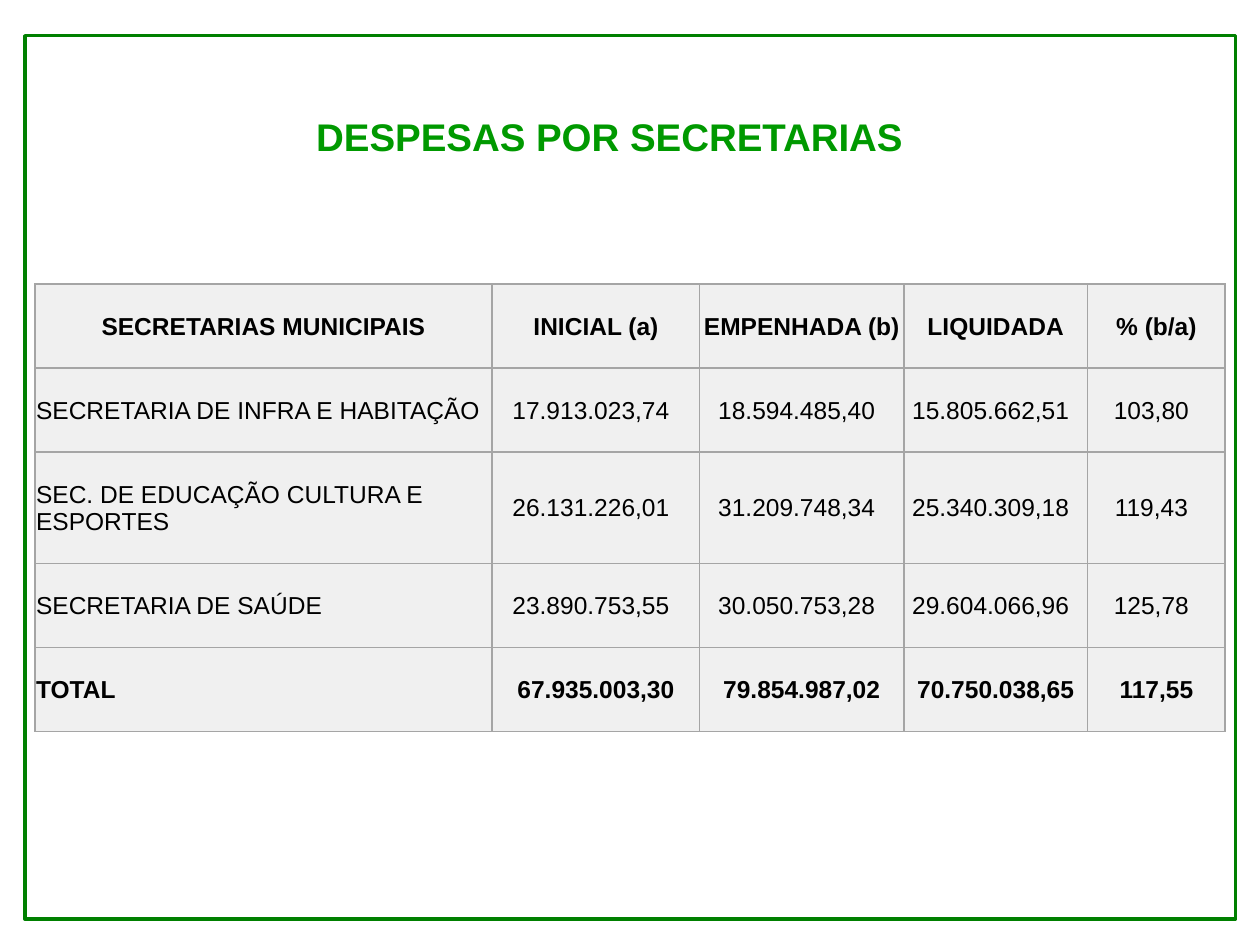
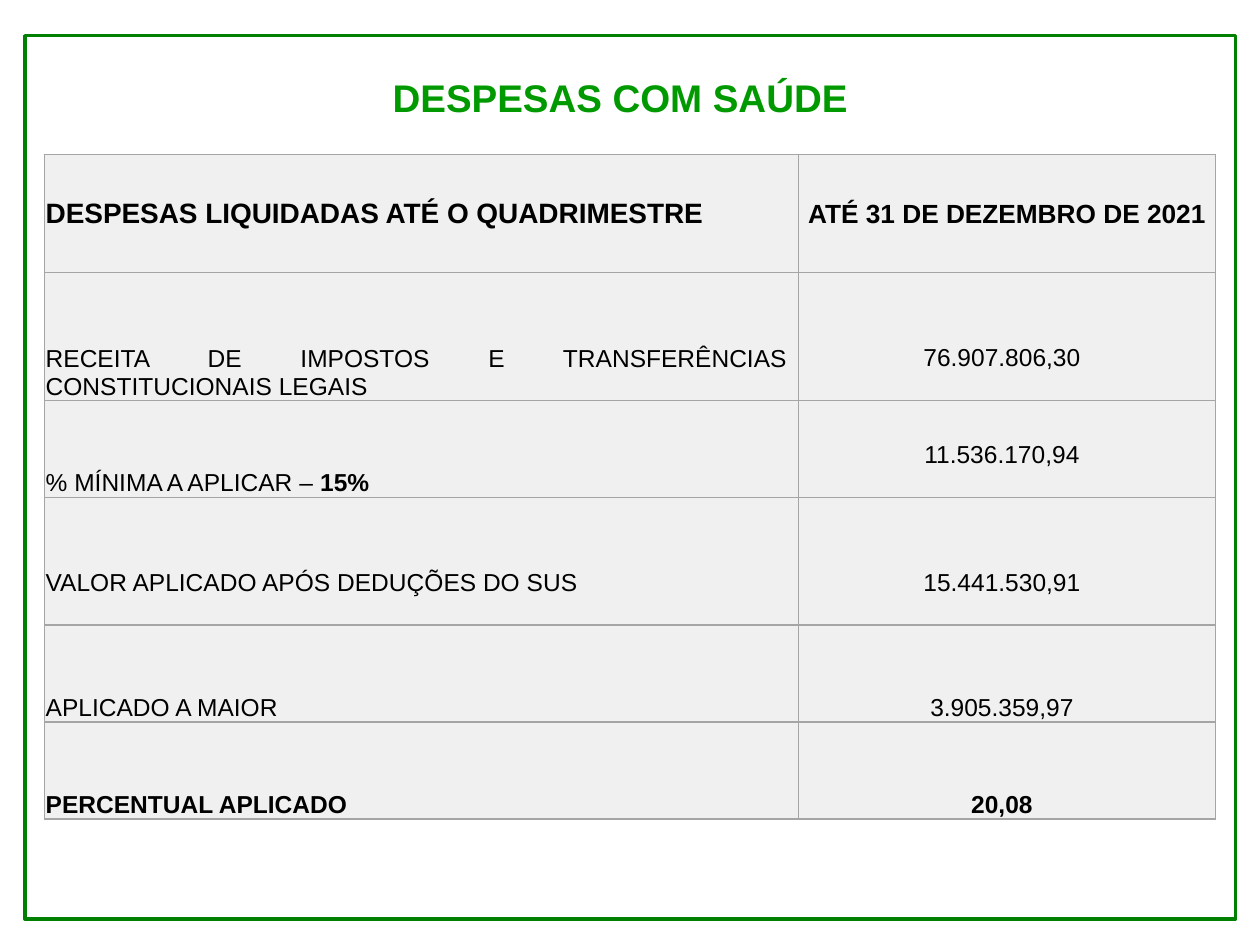
"""Builds two slides of municipal spending tables in a shared green frame."""
from lxml import etree
from pptx import Presentation
from pptx import util as u
from pptx.dml import color
from pptx.enum import shapes, text
from pptx.oxml import ns

COLORS = {"frame": "008000", "title": "009900", "text": "000000",
          "cell": "F0F0F0", "border": "A5A5A5"}
FONT = "Arial"
LEFT, CENTER, JUSTIFY = text.PP_ALIGN.LEFT, text.PP_ALIGN.CENTER, text.PP_ALIGN.JUSTIFY
MIDDLE, BOTTOM = text.MSO_ANCHOR.MIDDLE, text.MSO_ANCHOR.BOTTOM
INSET, WIDE_INSET, LINE = 0.72, 6.48, 16.1

SECRETARIAS = {
    "title": "DESPESAS POR SECRETARIAS", "title_top": 37.4, "title_inset": 25.5,
    "left": 19.9, "top": 162.3,
    "columns": [261.4, 118.6, 116.6, 105.1, 78.6],
    "heights": [48, 48, 63.7, 48, 48],
    "rows": [
        ("SECRETARIAS MUNICIPAIS", "INICIAL (a)", "EMPENHADA (b)", "LIQUIDADA", "% (b/a)"),
        ("SECRETARIA DE INFRA E HABITAÇÃO", "17.913.023,74", "18.594.485,40", "15.805.662,51", "103,80"),
        ("SEC. DE EDUCAÇÃO CULTURA E ESPORTES", "26.131.226,01", "31.209.748,34", "25.340.309,18", "119,43"),
        ("SECRETARIA DE SAÚDE", "23.890.753,55", "30.050.753,28", "29.604.066,96", "125,78"),
        ("TOTAL", "67.935.003,30", "79.854.987,02", "70.750.038,65", "117,55"),
    ],
}
SAUDE = {
    "title": "DESPESAS COM SAÚDE", "title_top": 15.1, "title_inset": 13.3,
    "left": 25.4, "top": 88.3,
    "columns": [430.9, 238.3],
    "heights": [67.4, 73.1, 55.4, 73.1, 55.4, 55.4],
    "rows": [
        ("DESPESAS LIQUIDADAS ATÉ O QUADRIMESTRE", "ATÉ 31 DE DEZEMBRO DE 2021"),
        ("RECEITA DE IMPOSTOS E TRANSFERÊNCIAS CONSTITUCIONAIS LEGAIS", "76.907.806,30"),
        (("% MÍNIMA A APLICAR – ", "15%"), "11.536.170,94"),
        ("VALOR APLICADO APÓS DEDUÇÕES DO SUS", "15.441.530,91"),
        ("APLICADO A MAIOR", "3.905.359,97"),
        ("PERCENTUAL APLICADO", "20,08"),
    ],
}
HEALTH_HEADER_SIZES = (16, 15)
LIFTED_CELLS = {(1, 1), (2, 1), (3, 0), (3, 1)}


def rgb(name):
    return color.RGBColor.from_string(COLORS[name])


def style(paragraph, size, bold, tint, alignment):
    font = paragraph.font
    font.name, font.size, font.bold = FONT, u.Pt(size), bold
    font.color.rgb = rgb(tint)
    paragraph.alignment = alignment


def add_frame(slide):
    frame = slide.shapes.add_shape(shapes.MSO_SHAPE.RECTANGLE,
                                   u.Pt(14.2), u.Pt(20.4), u.Pt(691.8), u.Pt(504.7))
    frame.shadow.inherit = False
    frame.fill.background()
    frame.line.color.rgb = rgb("frame")
    frame.line.width = u.Pt(2)


def add_title(slide, content):
    box = slide.shapes.add_textbox(u.Pt(65.5), u.Pt(content["title_top"]), u.Pt(584), u.Pt(55.4))
    frame = box.text_frame
    frame.word_wrap = True
    frame.margin_top, frame.margin_bottom = u.Pt(27.7), 0
    frame.margin_right = u.Pt(content["title_inset"])
    paragraph = frame.paragraphs[0]
    paragraph.text = content["title"]
    style(paragraph, 22, True, "title", CENTER)


def paint_cell(cell):
    cell.fill.solid()
    cell.fill.fore_color.rgb = rgb("cell")
    properties = cell._tc.get_or_add_tcPr()
    for index, side in enumerate(("lnL", "lnR", "lnT", "lnB")):
        line = etree.Element(ns.qn(f"a:{side}"), w=str(u.Pt(1)))
        fill = etree.SubElement(line, ns.qn("a:solidFill"))
        etree.SubElement(fill, ns.qn("a:srgbClr"), val=COLORS["border"])
        properties.insert(index, line)


def write_cell(cell, content, size, bold, alignment, anchor, right, bottom):
    cell.margin_left = cell.margin_top = u.Pt(INSET)
    cell.margin_right, cell.margin_bottom = u.Pt(right), u.Pt(bottom)
    cell.vertical_anchor = anchor
    paragraph = cell.text_frame.paragraphs[0]
    style(paragraph, size, bold, "text", alignment)
    if isinstance(content, str):
        paragraph.text = content
    else:
        for part in content:
            paragraph.add_run().text = part
        paragraph.runs[-1].font.bold = True


def secretarias_style(row, column, last):
    edge = row in (0, last)
    alignment = CENTER if column or row == 0 else LEFT
    right = WIDE_INSET if column and not edge else INSET
    return 14, edge, alignment, MIDDLE, right, 0


def saude_style(row, column, last):
    if row == 0:
        return HEALTH_HEADER_SIZES[column], True, CENTER if column else LEFT, MIDDLE, INSET, 0
    bottom = LINE if (row, column) in LIFTED_CELLS else 0
    return 14, row == last, CENTER if column else JUSTIFY, BOTTOM, WIDE_INSET, bottom


def add_table(slide, content, cell_style):
    rows, columns, heights = content["rows"], content["columns"], content["heights"]
    table = slide.shapes.add_table(len(rows), len(columns), u.Pt(content["left"]), u.Pt(content["top"]),
                                   u.Pt(sum(columns)), u.Pt(sum(heights))).table
    table.first_row = table.horz_banding = False
    for column, width in zip(table.columns, columns):
        column.width = u.Pt(width)
    for row, height in zip(table.rows, heights):
        row.height = u.Pt(height)
    for row, values in enumerate(rows):
        for column, value in enumerate(values):
            cell = table.cell(row, column)
            paint_cell(cell)
            write_cell(cell, value, *cell_style(row, column, len(rows) - 1))


def main():
    presentation = Presentation()
    presentation.slide_width, presentation.slide_height = u.Pt(720), u.Pt(540)
    for content, cell_style in ((SECRETARIAS, secretarias_style), (SAUDE, saude_style)):
        slide = presentation.slides.add_slide(presentation.slide_layouts[6])
        add_frame(slide)
        add_title(slide, content)
        add_table(slide, content, cell_style)
    presentation.save("out.pptx")


if __name__ == "__main__":
    main()
